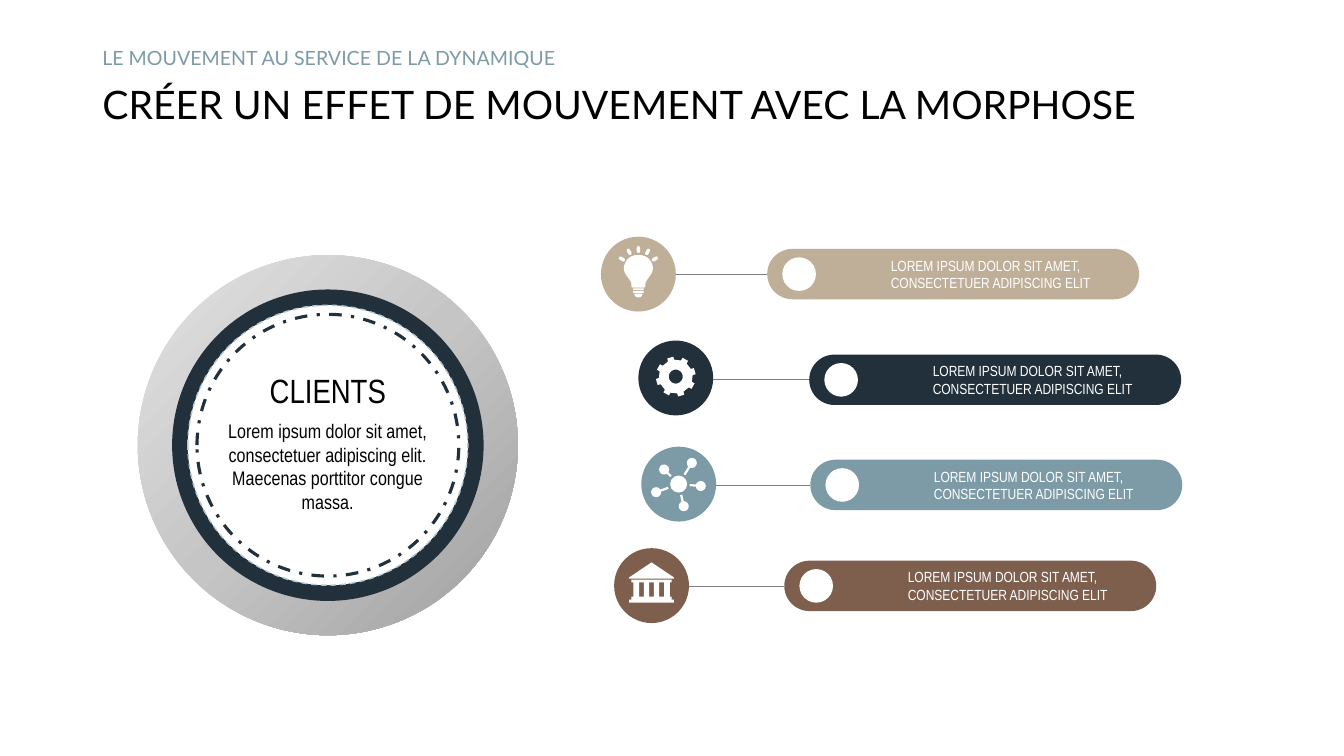
import math
from dataclasses import dataclass

from pptx import Presentation, oxml
from pptx import util as u
from pptx.dml import color
from pptx.enum import dml, shapes, text
from pptx.oxml import ns

Pt = u.Pt
OVAL = shapes.MSO_SHAPE.OVAL
PILL = shapes.MSO_SHAPE.ROUNDED_RECTANGLE
LEFT, MID = text.PP_ALIGN.LEFT, text.PP_ALIGN.CENTER


@dataclass(frozen=True)
class Theme:
    sand: str = "BFAF99"
    navy: str = "22303C"
    steel: str = "7C9BA6"
    brown: str = "7E5F4D"
    white: str = "FFFFFF"
    black: str = "000000"
    grey: str = "808080"
    pale: str = "B2C8D7"
    shine: tuple = ((0, "A0A0A0"), (50, "C5C5C5"), (100, "E3E3E3"))
    head: str = "Lato"
    body: str = "Arial Narrow"
    title: float = 28
    name: float = 24
    text: float = 14
    label: float = 10.5


T = Theme()
LABEL = "LOREM IPSUM DOLOR SIT AMET, CONSECTETUER ADIPISCING ELIT"
BAR_W, BAR_H, ICON = 265.7, 36, 53.5


def rgb(code):
    return color.RGBColor.from_string(code)


def paint(shape, fill):
    shape.shadow.inherit = False
    shape.fill.solid()
    shape.fill.fore_color.rgb = rgb(fill)
    shape.line.fill.background()
    return shape


def block(group, kind, x, y, w, h, fill, turn=0):
    """Add a filled preset shape centred on x, y."""
    shape = group.shapes.add_shape(kind, Pt(x - w / 2), Pt(y - h / 2), Pt(w), Pt(h))
    shape.rotation = turn
    if kind == PILL:
        shape.adjustments[0] = 0.5
    return paint(shape, fill)


def disc(group, x, y, size, fill):
    return block(group, OVAL, x, y, size, size, fill)


def edge(shape, tint, width, dash):
    shape.line.color.rgb = rgb(tint)
    shape.line.width = Pt(width)
    shape.line.dash_style = dash


def shine(shape):
    """Give a shape a round gradient that starts at its lower right corner."""
    stops = "".join(
        f'<a:gs pos="{at * 1000}"><a:srgbClr val="{tint}"/></a:gs>' for at, tint in T.shine)
    fill = oxml.parse_xml(
        f'<a:gradFill {ns.nsdecls("a")} rotWithShape="1"><a:gsLst>{stops}</a:gsLst>'
        '<a:path path="circle"><a:fillToRect l="100000" t="100000"/></a:path></a:gradFill>')
    shape.fill.background()
    old = shape.element.spPr.find(ns.qn("a:noFill"))
    old.getparent().replace(old, fill)


def wire(group, x1, y1, x2, y2, tint, width):
    line = group.shapes.add_connector(
        shapes.MSO_CONNECTOR.STRAIGHT, Pt(x1), Pt(y1), Pt(x2), Pt(y2))
    line.line.color.rgb = rgb(tint)
    line.line.width = Pt(width)
    line.element.spPr.append(oxml.parse_xml(f'<a:effectLst {ns.nsdecls("a")}/>'))


def outline(group, x, y, *rings):
    """Draw closed rings of points, given relative to x, y, as one white shape."""
    rings = [[(Pt(x + dx), Pt(y + dy)) for dx, dy in ring] for ring in rings]
    pen = group.shapes.build_freeform(*rings[0][0])
    pen.add_line_segments(rings[0][1:])
    for ring in rings[1:]:
        pen.move_to(*ring[0])
        pen.add_line_segments(ring[1:])
    paint(pen.convert_to_shape(), T.white)


def polar(size, turn):
    return size * math.cos(math.radians(turn)), size * math.sin(math.radians(turn))


def curve(start, *parts, steps=8):
    """Sample a chain of cubic curves, each given by two handles and an end."""
    dots = [start]
    for one, two, end in parts:
        for t in (i / steps for i in range(1, steps + 1)):
            s = 1 - t
            dots.append(tuple(
                s ** 3 * a + 3 * s * s * t * b + 3 * s * t * t * c + t ** 3 * d
                for a, b, c, d in zip(start, one, two, end)))
        start = end
    return dots


def mirror(half):
    return half + [(-x, y) for x, y in reversed(half)]


def box(left, top, right, low):
    return [(left, top), (right, top), (right, low), (left, low)]


def bulb(group, x, y, _):
    glass = curve((0, -13.7), ((7.6, -13.7), (10.1, -7.9), (10.4, -4.3)),
                  ((10.4, -1.4), (8.3, 1.4), (7.9, 1.6)),
                  ((7.9, 2.2), (5, 5), (5, 7.2)),
                  ((5, 9.4), (5, 9.4), (3.6, 9.7)))
    base = curve((2.9, 13.9), ((2.9, 15.1), (2.2, 16.6), (0, 16.6)))
    outline(group, x, y, mirror(glass))
    outline(group, x, y, mirror(base))
    for drop in (10.8, 12.8):
        block(group, PILL, x, y + drop, 7.8, 1.2, T.white)
    for turn in (-60, -29, 0, 29, 60):
        dx, dy = polar(13.6, turn - 90)
        block(group, PILL, x + dx, y - 4 + dy, 2.4, 4.8, T.white, turn)


def gear(group, x, y, _):
    teeth = [polar(size, 45 * i - 16 + turn) for i in range(8)
             for size, turn in ((12.1, -11), (14.3, -9), (14.3, 9), (12.1, 11))]
    outline(group, x, y - 1, teeth, [polar(5, 10 * i) for i in range(36)])


def web(group, x, y, _):
    disc(group, x, y, 12.2, T.white)
    for dx, dy in ((-10.4, -10.4), (9.4, -15.1), (15.8, 1.4), (3.6, 15.8), (-16.1, 5.8)):
        near = 7.9 / math.hypot(dx, dy)
        wire(group, x + dx * near, y + dy * near, x + dx, y + dy, T.white, 1.6)
        disc(group, x + dx, y + dy, 7.2, T.white)


def bank(group, x, y, _):
    hall = mirror([(14.4, -4.3), (14.4, -2.2), (13, -2.2), (13, 7.9), (14.4, 7.9),
                   (14.4, 10.1), (16, 10.1), (16, 12.2)])
    gaps = [box(mid - 1.7, -2.2, mid + 1.7, 7.9) for mid in (-7.2, 0, 7.2)]
    outline(group, x, y, hall, *gaps)
    outline(group, x, y, mirror([(0, -16.6), (16, -5.8), (16, -5)]))


def write(frame, words, size, font, tint, align=LEFT):
    frame.text = words
    frame.word_wrap = True
    frame.auto_size = text.MSO_AUTO_SIZE.NONE
    par = frame.paragraphs[0]
    par.alignment = align
    face = par.runs[0].font
    face.size, face.name = Pt(size), font
    face.color.rgb = rgb(tint)
    return par


def note(group, x, y, w, h, words, size, font, tint, align=LEFT, anchor=text.MSO_ANCHOR.TOP):
    frame = group.shapes.add_textbox(Pt(x), Pt(y), Pt(w), Pt(h)).text_frame
    frame.vertical_anchor = anchor
    return write(frame, words, size, font, tint, align)


def header(slide):
    title = slide.shapes.title
    title.left, title.top, title.width, title.height = Pt(66), Pt(56), Pt(828), Pt(41)
    title.text_frame.vertical_anchor = text.MSO_ANCHOR.MIDDLE
    write(title.text_frame, "CRÉER UN EFFET DE MOUVEMENT AVEC LA MORPHOSE",
          T.title, T.head, T.black).line_spacing = 0.9
    par = note(slide, 66, 29, 828, 26, "LE MOUVEMENT AU SERVICE DE LA DYNAMIQUE",
               T.text, T.head, T.steel, anchor=text.MSO_ANCHOR.MIDDLE)
    par.line_spacing = 0.9


def medal(slide, x, y):
    group = slide.shapes.add_group_shape()
    shine(disc(group, x, y, 271.5, T.white))
    disc(group, x, y, 222.5, T.navy)
    edge(disc(group, x, y, 200, T.white), T.pale, 1, dml.MSO_LINE.DASH)
    edge(disc(group, x, y, 187, T.white), T.navy, 2.25, dml.MSO_LINE.DASH_DOT)
    note(group, x - 136, 260.6, 272, 36, "CLIENTS", T.name, T.body, T.black, MID)
    note(group, x - 78.4, 296, 156.5, 75,
         "Lorem ipsum dolor sit amet, consectetuer adipiscing elit. "
         "Maecenas porttitor congue massa.", T.text, T.body, T.black, MID)


def entry(slide, tint, draw, x, y, left, mid):
    """Add an icon centred on x, y, wired to a pill that starts at left, mid."""
    group = slide.shapes.add_group_shape()
    disc(group, x, y, ICON, tint)
    block(group, PILL, left + BAR_W / 2, mid, BAR_W, BAR_H, tint)
    wire(group, x + ICON / 2, mid, left, mid, T.grey, 0.5)
    note(group, left + 81.2, mid - 16.2, 184.5, 32.4, LABEL, T.label, T.body, T.white,
         anchor=text.MSO_ANCHOR.MIDDLE)
    disc(group, left + 22.8, mid, 24, T.white)
    draw(group, x, y, tint)


def main():
    deck = Presentation()
    deck.slide_width, deck.slide_height = Pt(960), Pt(540)
    slide = deck.slides.add_slide(deck.slide_layouts[5])
    header(slide)
    medal(slide, 234.2, 318)
    for row in ((T.sand, bulb, 456, 195.8, 548, 195.8),
                (T.navy, gear, 482.7, 270, 578, 271.3),
                (T.steel, web, 484.8, 345.8, 578.8, 346.4),
                (T.brown, bank, 465.4, 418.3, 560.2, 418.5)):
        entry(slide, *row)
    deck.save("out.pptx")


if __name__ == "__main__":
    main()
